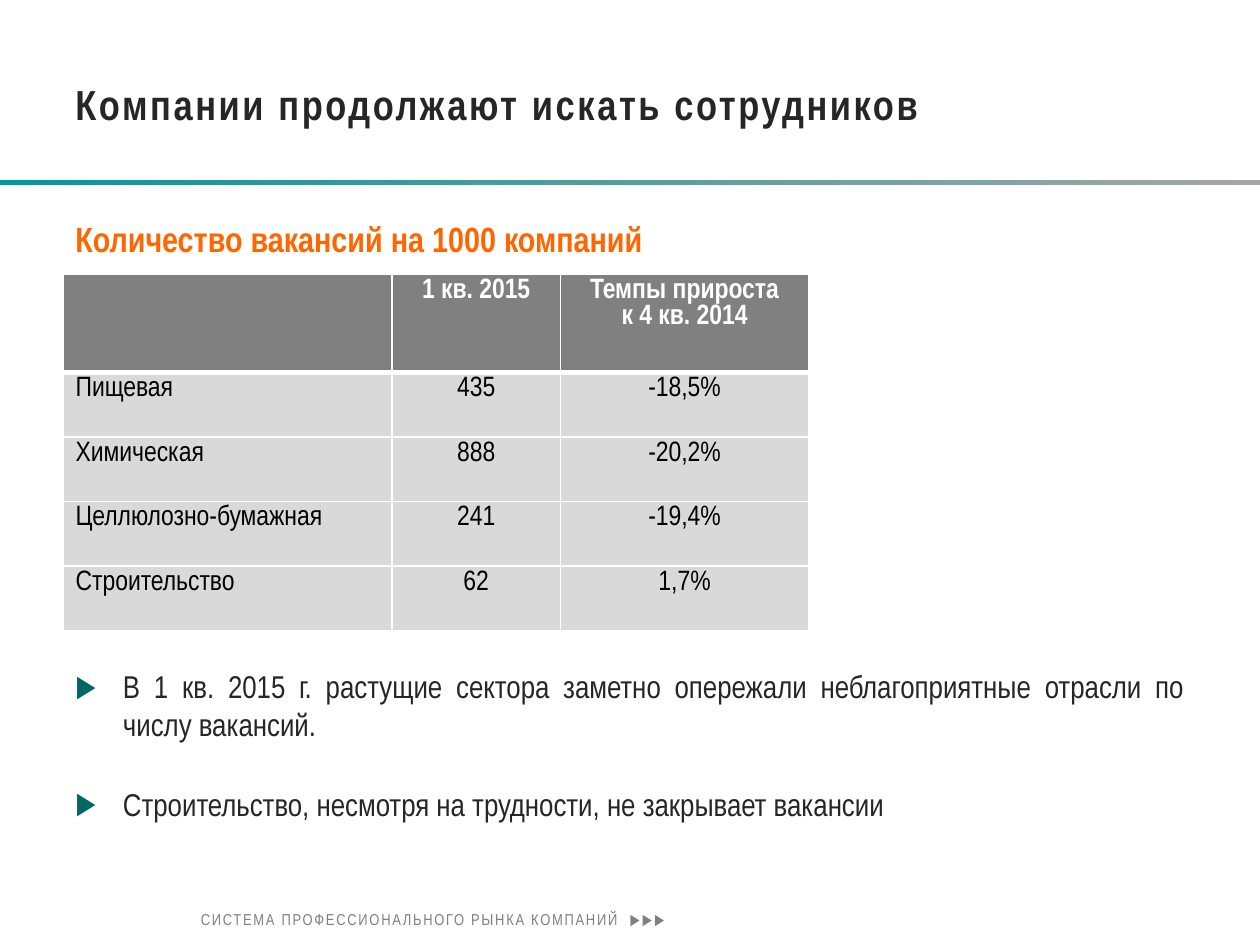
from lxml import etree
from pptx import Presentation
from pptx.dml.color import RGBColor
from pptx.enum.shapes import MSO_SHAPE
from pptx.enum.text import MSO_ANCHOR, PP_ALIGN
from pptx.oxml.ns import qn
from pptx.util import Cm, Pt

RECT = MSO_SHAPE.RECTANGLE
TOP, MIDDLE = MSO_ANCHOR.TOP, MSO_ANCHOR.MIDDLE
LEFT, CENTER, JUSTIFY = PP_ALIGN.LEFT, PP_ALIGN.CENTER, PP_ALIGN.JUSTIFY

FONT = "Arial Narrow"
WHITE, BLACK, INK = "FFFFFF", "000000", "262626"
GRAY, PALE, SILVER = "808080", "D9D9D9", "A6A6A6"
TEAL, DEEP, ORANGE = "009999", "006666", "FF6600"

HEAD = ["", "1 кв. 2015", "Темпы прироста\nк 4 кв. 2014"]
ROWS = [
    ["Пищевая", "435", "-18,5%"],
    ["Химическая", "888", "-20,2%"],
    ["Целлюлозно-бумажная", "241", "-19,4%"],
    ["Строительство", "62", "1,7%"],
]
POINTS = [
    "В 1 кв. 2015 г. растущие сектора заметно опережали "
    "неблагоприятные отрасли по числу вакансий.",
    "Строительство, несмотря на трудности, не закрывает вакансии",
]


def paint(value):
    return RGBColor.from_string(value)


def add_run(para, text, size, color, bold=False, track=0):
    run = para.add_run()
    run.text = text
    font = run.font
    font.name, font.size, font.bold = FONT, Pt(size), bold
    font.color.rgb = paint(color)
    if track:
        run._r.get_or_add_rPr().set("spc", str(int(track * 100)))


def add_frame(slide, box, anchor=TOP):
    frame = slide.shapes.add_textbox(*map(Cm, box)).text_frame
    frame.word_wrap = True
    frame.vertical_anchor = anchor
    return frame


def add_title(slide, box, text):
    para = add_frame(slide, box, MIDDLE).paragraphs[0]
    add_run(para, text, 24, INK, True, 1.5)


def add_stripe(slide, box):
    bar = slide.shapes.add_shape(RECT, *map(Cm, box))
    bar.shadow.inherit = False
    bar.line.fill.background()
    bar.fill.gradient()
    bar.fill.gradient_angle = 0
    for stop, color in zip(bar.fill.gradient_stops, (TEAL, SILVER)):
        stop.color.rgb = paint(color)


def add_label(slide, box, text):
    add_run(add_frame(slide, box).paragraphs[0], text, 20, ORANGE, True)


def add_edge(cell, side, width):
    props = cell._tc.get_or_add_tcPr()
    line = etree.SubElement(props, qn("a:ln" + side), w=str(Pt(width)))
    fill = etree.SubElement(line, qn("a:solidFill"))
    etree.SubElement(fill, qn("a:srgbClr"), val=WHITE)


def fill_cell(cell, text, row, col):
    head = row == 0
    for side in "LRTB":
        thick = (side == "B" and row == 0) or (side == "T" and row == 1)
        add_edge(cell, side, 3 if thick else 1)
    cell.fill.solid()
    cell.fill.fore_color.rgb = paint(GRAY if head else PALE)
    cell.margin_top = Cm(0.08)
    frame = cell.text_frame
    for i, line in enumerate(text.split("\n")):
        para = frame.add_paragraph() if i else frame.paragraphs[0]
        para.alignment = CENTER if col else LEFT
        if line:
            add_run(para, line, 16, WHITE if head else BLACK, head)


def add_grid(slide, box, widths, top):
    data = [HEAD] + ROWS
    size = len(data), len(HEAD)
    grid = slide.shapes.add_table(*size, *map(Cm, box)).table
    for col, width in zip(grid.columns, widths):
        col.width = Cm(width)
    rest = (box[3] - top) / len(ROWS)
    for r, row in enumerate(data):
        grid.rows[r].height = Cm(rest if r else top)
        for c, text in enumerate(row):
            fill_cell(grid.cell(r, c), text, r, c)


def add_bullet(para, mark, color, indent):
    props = para._p.get_or_add_pPr()
    props.set("marL", str(Cm(indent)))
    props.set("indent", str(-Cm(indent)))
    tint = etree.SubElement(props, qn("a:buClr"))
    etree.SubElement(tint, qn("a:srgbClr"), val=color)
    etree.SubElement(props, qn("a:buFont"), typeface="Arial")
    etree.SubElement(props, qn("a:buChar"), char=mark)


def add_points(slide, box):
    frame = add_frame(slide, box)
    for i, text in enumerate(POINTS):
        para = frame.add_paragraph() if i else frame.paragraphs[0]
        add_bullet(para, "▶", DEEP, 0.96)
        para.alignment = JUSTIFY
        para.space_before = Pt(18 if i else 0)
        para.space_after = Pt(6)
        add_run(para, text, 18, INK)


def add_footer(slide, box):
    para = add_frame(slide, box, MIDDLE).paragraphs[0]
    add_run(para, "СИСТЕМА ПРОФЕССИОНАЛЬНОГО РЫНКА КОМПАНИЙ", 9, GRAY, track=1)
    add_run(para, " ", 9, GRAY, track=4)
    add_run(para, "▶▶▶", 9, GRAY, track=1)


def main():
    deck = Presentation()
    deck.slide_width, deck.slide_height = Cm(25.4), Cm(19.05)
    slide = deck.slides.add_slide(deck.slide_layouts[6])
    add_stripe(slide, (0, 3.62, 25.4, 0.11))
    add_footer(slide, (3.8, 18.24, 13.7, 0.6))
    add_title(slide, (1.27, 0.5, 22.86, 3.18),
              "Компании продолжают искать сотрудников")
    add_grid(slide, (1.27, 5.53, 15.03, 7.18), (6.63, 3.4, 5), 1.98)
    add_points(slide, (1.27, 13.33, 22.86, 4.6))
    add_label(slide, (1.27, 4.27, 22.86, 1.2),
              "Количество вакансий на 1000 компаний")
    deck.save("out.pptx")


if __name__ == "__main__":
    main()
